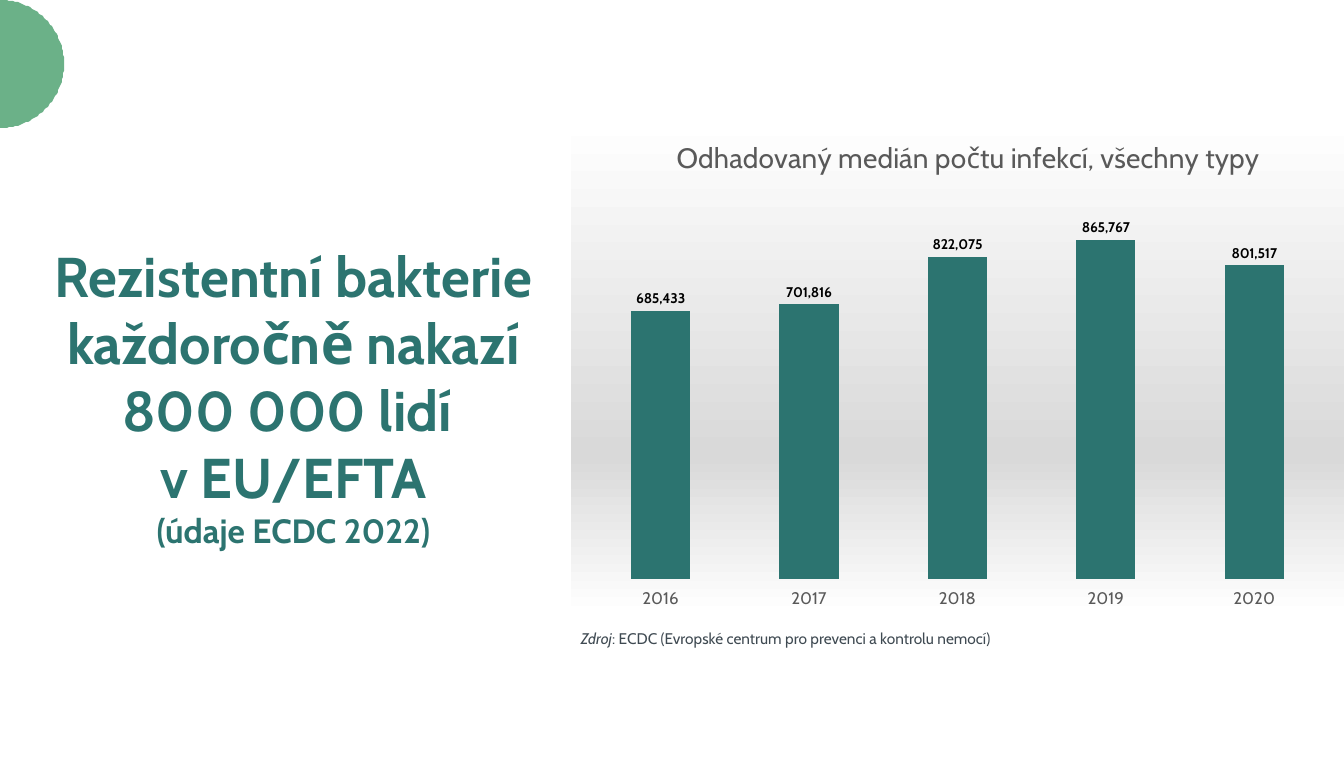
from math import cos, pi, sin

from lxml import etree
from pptx import Presentation
from pptx.chart.data import CategoryChartData
from pptx.dml.color import RGBColor
from pptx.enum.chart import XL_CHART_TYPE, XL_LABEL_POSITION, XL_TICK_LABEL_POSITION, XL_TICK_MARK
from pptx.enum.text import MSO_ANCHOR, MSO_AUTO_SIZE, PP_ALIGN
from pptx.oxml import parse_xml
from pptx.util import Pt

COLUMN = XL_CHART_TYPE.COLUMN_CLUSTERED
OUTSIDE = XL_LABEL_POSITION.OUTSIDE_END
NO_TICK = XL_TICK_MARK.NONE
LOW = XL_TICK_LABEL_POSITION.LOW
TOP = MSO_ANCHOR.TOP
NO_FIT = MSO_AUTO_SIZE.NONE
CENTER = PP_ALIGN.CENTER

PX = 914400 / 100.8
FONT = "Cabin"
TEAL, GREEN, GRAY, SLATE, BLACK = "2C7470", "6BB188", "595959", "3F4A52", "000000"
C_NS = "http://schemas.openxmlformats.org/drawingml/2006/chart"
A_NS = "http://schemas.openxmlformats.org/drawingml/2006/main"


def style(font, size, color, bold=False, italic=False):
    font.name, font.size = FONT, Pt(size)
    font.bold, font.italic = bold, italic
    font.color.rgb = RGBColor.from_string(color)


def set_layout(parent, index, **parts):
    """Give a chart part a manual layout, in fractions of the chart."""
    for old in parent.findall(f"{{{C_NS}}}layout"):
        parent.remove(old)
    layout = parse_xml(f'<c:layout xmlns:c="{C_NS}"><c:manualLayout/></c:layout>')
    for name, val in parts.items():
        etree.SubElement(layout[0], f"{{{C_NS}}}{name}").set("val", str(val))
    parent.insert(index, layout)


prs = Presentation()
prs.slide_width, prs.slide_height = round(1344 * PX), round(757 * PX)
slide = prs.slides.add_slide(prs.slide_layouts[5])
shapes = slide.shapes

# Half disc in the corner
RADIUS, STEPS = 64, 90
arc = [(RADIUS * sin(pi * i / STEPS), RADIUS * (1 - cos(pi * i / STEPS)))
       for i in range(STEPS + 1)]
outline = shapes.build_freeform(0, 0, scale=PX)
outline.add_line_segments(arc[1:], close=True)
disc = outline.convert_to_shape()
disc.shadow.inherit = False
disc.fill.solid()
disc.fill.fore_color.rgb = RGBColor.from_string(GREEN)
disc.line.fill.background()

# Headline
title = shapes.title
title.left, title.top, title.width, title.height = [round(v * PX) for v in (33, 236, 521, 390)]
frame = title.text_frame
frame.word_wrap, frame.auto_size, frame.vertical_anchor = True, NO_FIT, TOP
para = frame.paragraphs[0]
para.alignment = CENTER
for i, line in enumerate(["Rezistentní bakterie každoročně nakazí 800 000 lidí ", "v EU/EFTA"]):
    if i:
        para.add_line_break()
    run = para.add_run()
    run.text = line
    style(run.font, 40, TEAL, bold=True)
para = frame.add_paragraph()
para.alignment = CENTER
run = para.add_run()
run.text = "(údaje ECDC 2022)"
style(run.font, 24, TEAL, bold=True)

# Infections by year
data = CategoryChartData(number_format="#,##0")
data.categories = ["2016", "2017", "2018", "2019", "2020"]
data.add_series("Series 1", [685433, 701816, 822075, 865767, 801517])
box = [round(v * PX) for v in (571, 118, 773, 496)]
chart = shapes.add_chart(COLUMN, *box, data).chart
style(chart.font, 10, BLACK)
chart.has_legend = False
chart.has_title = True
run = chart.chart_title.text_frame.paragraphs[0].add_run()
run.text = "Odhadovaný medián počtu infekcí, všechny typy"
style(run.font, 20, GRAY)

space = chart.element if hasattr(chart, "element") else chart._chartSpace
set_layout(space.find(f".//{{{C_NS}}}title"), 1, xMode="edge", yMode="edge", x=0.13, y=0.03)
set_layout(space.find(f".//{{{C_NS}}}plotArea"), 0, layoutTarget="inner",
           xMode="edge", yMode="edge", x=0.02, y=0.14, w=0.96, h=0.79)
stops = "".join(f'<a:gs pos="{pos}000"><a:srgbClr val="{color}"/></a:gs>'
                for pos, color in [(0, "FFFFFF"), (68, "D9D9D9"), (100, "FFFFFF")])
space.find(f"{{{C_NS}}}chart").addnext(parse_xml(
    f'<c:spPr xmlns:c="{C_NS}" xmlns:a="{A_NS}"><a:gradFill><a:gsLst>{stops}</a:gsLst>'
    '<a:lin ang="5400000" scaled="0"/></a:gradFill><a:ln><a:noFill/></a:ln></c:spPr>'))

years = chart.category_axis
years.major_tick_mark = years.minor_tick_mark = NO_TICK
years.tick_label_position = LOW
years.format.line.fill.background()
style(years.tick_labels.font, 12, GRAY)
counts = chart.value_axis
counts.visible = counts.has_major_gridlines = False
counts.minimum_scale, counts.maximum_scale = 0, 1000000

plot = chart.plots[0]
plot.gap_width, plot.overlap, plot.vary_by_categories = 150, -25, False
bars = plot.series[0]
bars.format.fill.solid()
bars.format.fill.fore_color.rgb = RGBColor.from_string(TEAL)
labels = bars.data_labels
labels.show_value, labels.position = True, OUTSIDE
labels.number_format, labels.number_format_is_linked = "#,##0", False
style(labels.font, 10, BLACK, bold=True)

# Source line
source = shapes.add_textbox(*[round(v * PX) for v in (571, 624, 672, 29)])
source.text_frame.word_wrap = True
para = source.text_frame.paragraphs[0]
for text, italic in [("Zdroj", True),
                     (": ECDC (Evropské centrum pro prevenci a kontrolu nemocí)", False)]:
    run = para.add_run()
    run.text = text
    style(run.font, 11, SLATE, italic=italic)

prs.save("out.pptx")
